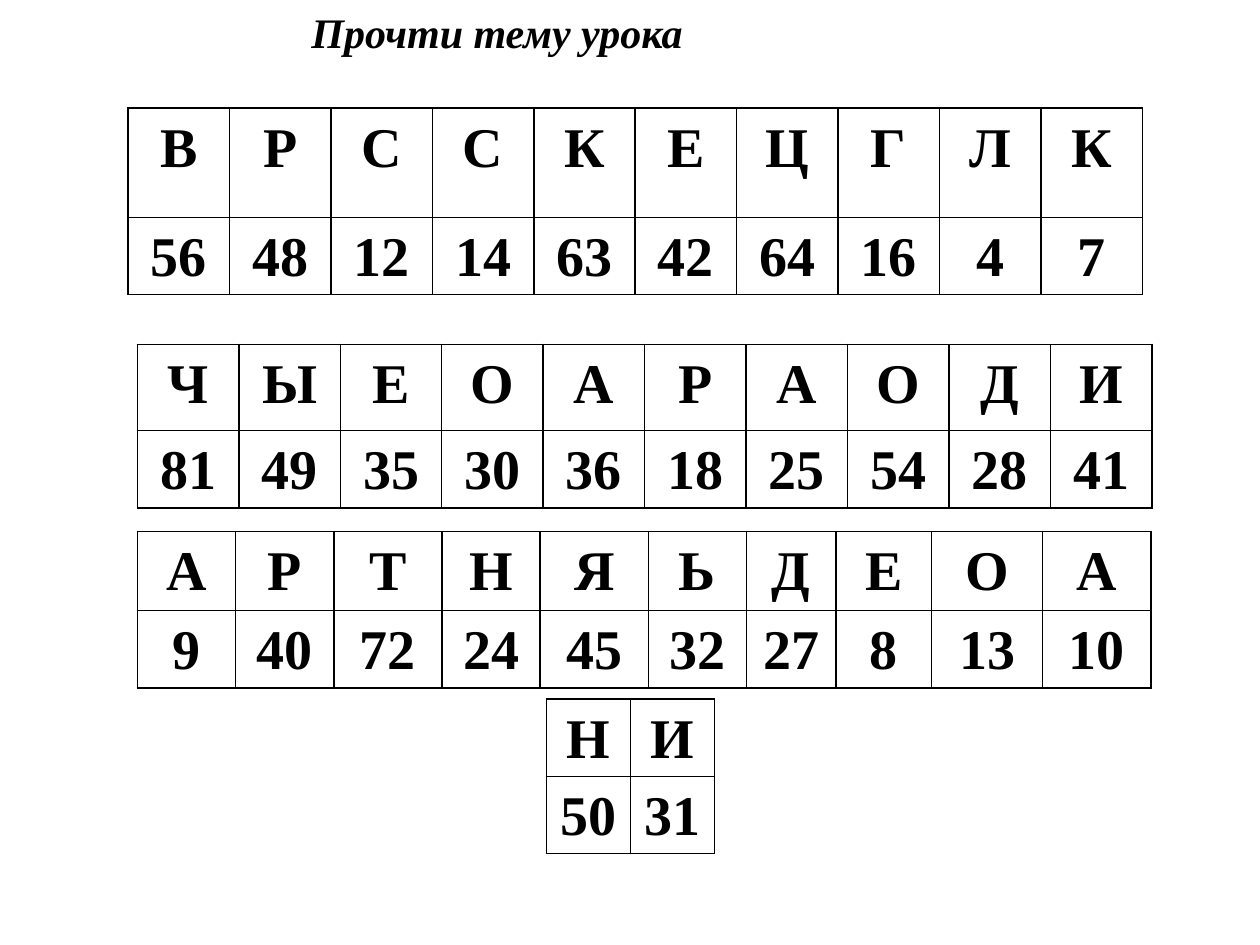
from lxml.etree import SubElement as Sub
from pptx import Presentation
from pptx.dml.color import RGBColor as RGB
from pptx.enum.text import MSO_ANCHOR as Anchor, MSO_AUTO_SIZE as Fit, PP_ALIGN as Align
from pptx.oxml.ns import qn
from pptx.util import Cm, Pt

HUES = {"ink": "000000", "page": "FFFFFF"}
FACE = "Times New Roman"
EVEN = [2.045] * 10

# left, top, column widths, row heights (cm), letters, numbers
GRIDS = [
    (2.58, 2.18, EVEN, (2.2, 1.55), "ВРССКЕЦГЛК",
     (56, 48, 12, 14, 63, 42, 64, 16, 4, 7)),
    (2.77, 6.94, EVEN, (1.74, 1.55), "ЧЫЕОАРАОДИ",
     (81, 49, 35, 30, 36, 18, 25, 54, 28, 41)),
    (2.77, 10.71, [1.98, 1.98, 2.18, 1.98, 2.18, 1.98, 1.8, 1.93, 2.24, 2.18],
     (1.6, 1.55), "АРТНЯЬДЕОА",
     (9, 40, 72, 24, 45, 32, 27, 8, 13, 10)),
    (11.02, 14.09, [1.69] * 2, (1.55, 1.55), "НИ", (50, 31)),
]


def style(para, size, italic=False):
    para.alignment = Align.CENTER
    font = para.font
    font.name, font.size = FACE, Pt(size)
    font.bold, font.italic = True, italic
    font.color.rgb = RGB.from_string(HUES["ink"])


def add_title(slide, text):
    box = slide.shapes.add_textbox(0, 0, Cm(20.04), Cm(1.28))
    frame = box.text_frame
    frame.word_wrap = True
    frame.auto_size = Fit.SHAPE_TO_FIT_TEXT
    frame.vertical_anchor = Anchor.MIDDLE
    para = frame.paragraphs[0]
    para.text = text
    style(para, 24, italic=True)


def add_edges(cell):
    # Border lines go before the fill in the cell properties
    props = cell._tc.get_or_add_tcPr()
    for spot, side in enumerate(("lnL", "lnR", "lnT", "lnB")):
        line = Sub(props, qn(f"a:{side}"), w=str(Pt(1)))
        fill = Sub(line, qn("a:solidFill"))
        Sub(fill, qn("a:srgbClr"), val=HUES["ink"])
        props.insert(spot, line)


def fill_cell(cell, text):
    cell.fill.background()
    cell.margin_left = cell.margin_right = Cm(0.18)
    cell.margin_top = cell.margin_bottom = 0
    para = cell.text_frame.paragraphs[0]
    para.text = str(text)
    para.line_spacing = 1.15
    style(para, 32)
    add_edges(cell)


def add_grid(slide, left, top, widths, heights, letters, numbers):
    frame = slide.shapes.add_table(2, len(widths), Cm(left), Cm(top),
                                   Cm(sum(widths)), Cm(sum(heights)))
    table = frame.table
    table.first_row = table.horz_banding = False
    for col, width in zip(table.columns, widths):
        col.width = Cm(width)
    for row, height, texts in zip(table.rows, heights, (letters, numbers)):
        row.height = Cm(height)
        for cell, text in zip(row.cells, texts):
            fill_cell(cell, text)


def main():
    deck = Presentation()
    deck.slide_width, deck.slide_height = Cm(25.4), Cm(19.05)
    slide = deck.slides.add_slide(deck.slide_layouts[6])
    back = slide.background.fill
    back.solid()
    back.fore_color.rgb = RGB.from_string(HUES["page"])

    # Heading
    add_title(slide, "Прочти тему урока")

    # Letter and number tables
    for grid in GRIDS:
        add_grid(slide, *grid)

    deck.save("out.pptx")


if __name__ == "__main__":
    main()
